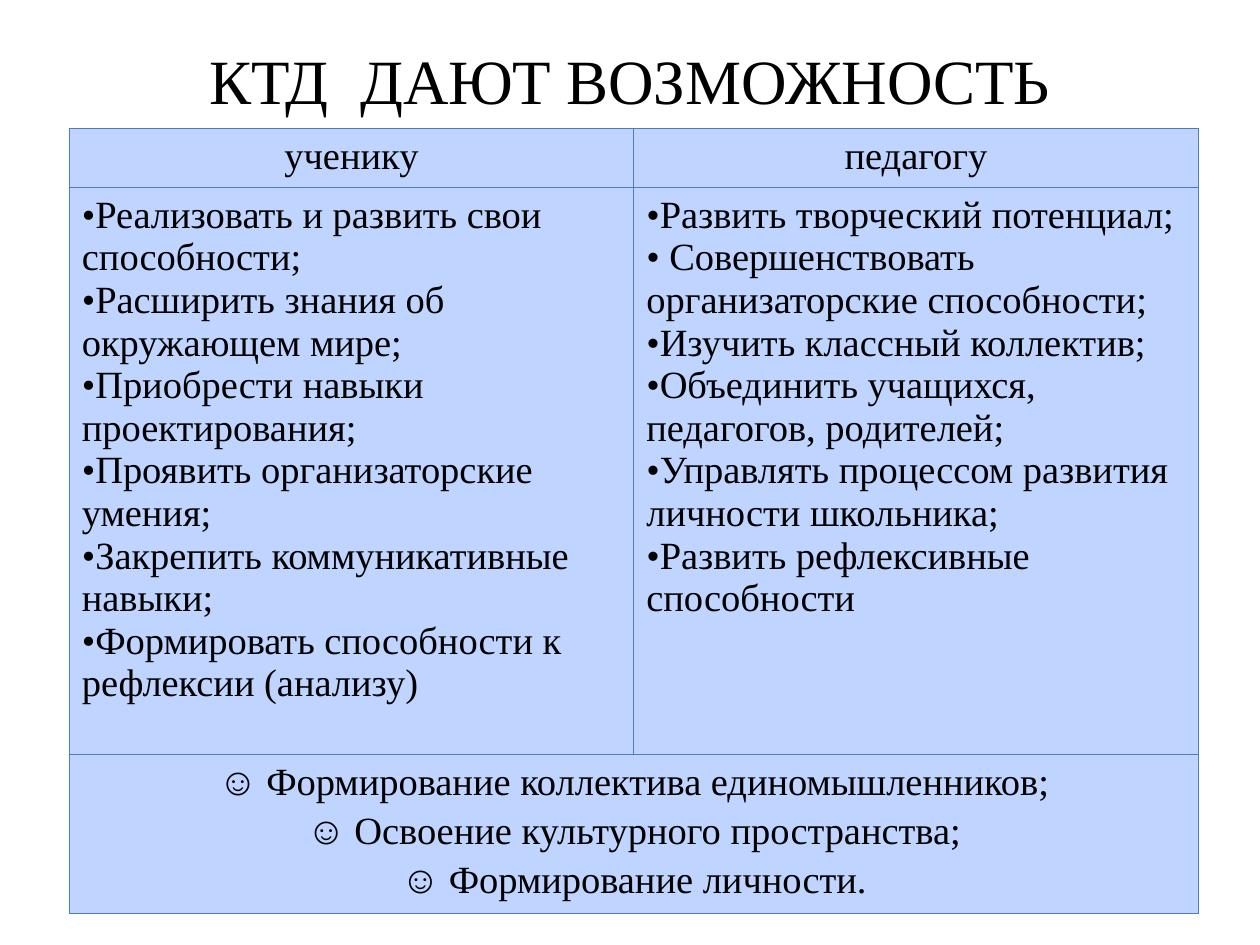
from lxml import etree
from pptx import Presentation
from pptx.dml.color import RGBColor
from pptx.enum.text import MSO_ANCHOR, PP_ALIGN
from pptx.oxml.ns import qn
from pptx.util import Inches, Pt

LEFT, CENTER = PP_ALIGN.LEFT, PP_ALIGN.CENTER
MIDDLE = MSO_ANCHOR.MIDDLE
FONT, INK, FILL, LINE = "Times New Roman", "000000", "BFD4FF", "4B7EBC"

TITLE = "КТД  ДАЮТ ВОЗМОЖНОСТЬ"
HEADS = ["ученику", "педагогу"]
LISTS = [
    [
        "Реализовать и развить свои способности;",
        "Расширить знания об окружающем мире;",
        "Приобрести навыки проектирования;",
        "Проявить организаторские умения;",
        "Закрепить коммуникативные навыки;",
        "Формировать способности к рефлексии (анализу)",
    ],
    [
        "Развить творческий потенциал;",
        " Совершенствовать организаторские способности;",
        "Изучить классный коллектив;",
        "Объединить учащихся, педагогов, родителей;",
        "Управлять процессом развития личности школьника;",
        "Развить рефлексивные способности",
    ],
]
GOALS = [
    "Формирование коллектива единомышленников;",
    "Освоение культурного пространства;",
    "Формирование личности.",
]
WIDTHS = [4.48, 4.48]
HEIGHTS = [0.47, 4.3, 1.22]


def color(code):
    return RGBColor.from_string(code)


def write(frame, lines, size=22, align=LEFT, bullet=None, indent=0, tab=None, spacing=None):
    for i, line in enumerate(lines):
        para = frame.paragraphs[0] if i == 0 else frame.add_paragraph()
        props = para._p.get_or_add_pPr()
        if bullet:
            props.set("marL", str(Inches(indent)))
            props.set("indent", str(-Inches(indent)))
            etree.SubElement(props, qn("a:buFont"), typeface=FONT)
            etree.SubElement(props, qn("a:buChar"), char=bullet)
        if tab:
            tabs = etree.SubElement(props, qn("a:tabLst"))
            etree.SubElement(tabs, qn("a:tab"), pos=str(Inches(tab)), algn="l")
        para.alignment = align
        if spacing:
            para.line_spacing = spacing
        run = para.add_run()
        run.text = line
        run.font.name = FONT
        run.font.size = Pt(size)
        run.font.color.rgb = color(INK)


def edge(cell):
    props = cell._tc.get_or_add_tcPr()
    for i, side in enumerate(("lnL", "lnR", "lnT", "lnB")):
        line = etree.Element(qn("a:" + side), w=str(Pt(0.75)))
        solid = etree.SubElement(line, qn("a:solidFill"))
        etree.SubElement(solid, qn("a:srgbClr"), val=LINE)
        props.insert(i, line)


deck = Presentation()
deck.slide_width, deck.slide_height = Inches(10), Inches(7.5)
slide = deck.slides.add_slide(deck.slide_layouts[6])

box = slide.shapes.add_textbox(Inches(0.5), Inches(0.17), Inches(9), Inches(0.92))
box.text_frame.word_wrap = True
box.text_frame.vertical_anchor = MIDDLE
write(box.text_frame, [TITLE], size=36, align=CENTER)

grid = slide.shapes.add_table(
    len(HEIGHTS), len(WIDTHS), Inches(0.55), Inches(1.02),
    Inches(sum(WIDTHS)), Inches(sum(HEIGHTS)),
).table
for col, width in zip(grid.columns, WIDTHS):
    col.width = Inches(width)
for row, height in zip(grid.rows, HEIGHTS):
    row.height = Inches(height)
for cell in grid.iter_cells():
    cell.fill.solid()
    cell.fill.fore_color.rgb = color(FILL)
    edge(cell)

for i, (head, items) in enumerate(zip(HEADS, LISTS)):
    write(grid.cell(0, i).text_frame, [head], align=CENTER)
    write(grid.cell(1, i).text_frame, items, bullet="•")

foot = grid.cell(2, 0)
foot.merge(grid.cell(2, 1))
foot.margin_left = foot.margin_right = Inches(0.07)
foot.margin_top = foot.margin_bottom = 0
write(foot.text_frame, GOALS, align=CENTER, bullet="☺", indent=0.38, tab=1.2, spacing=1.15)

deck.save("out.pptx")
